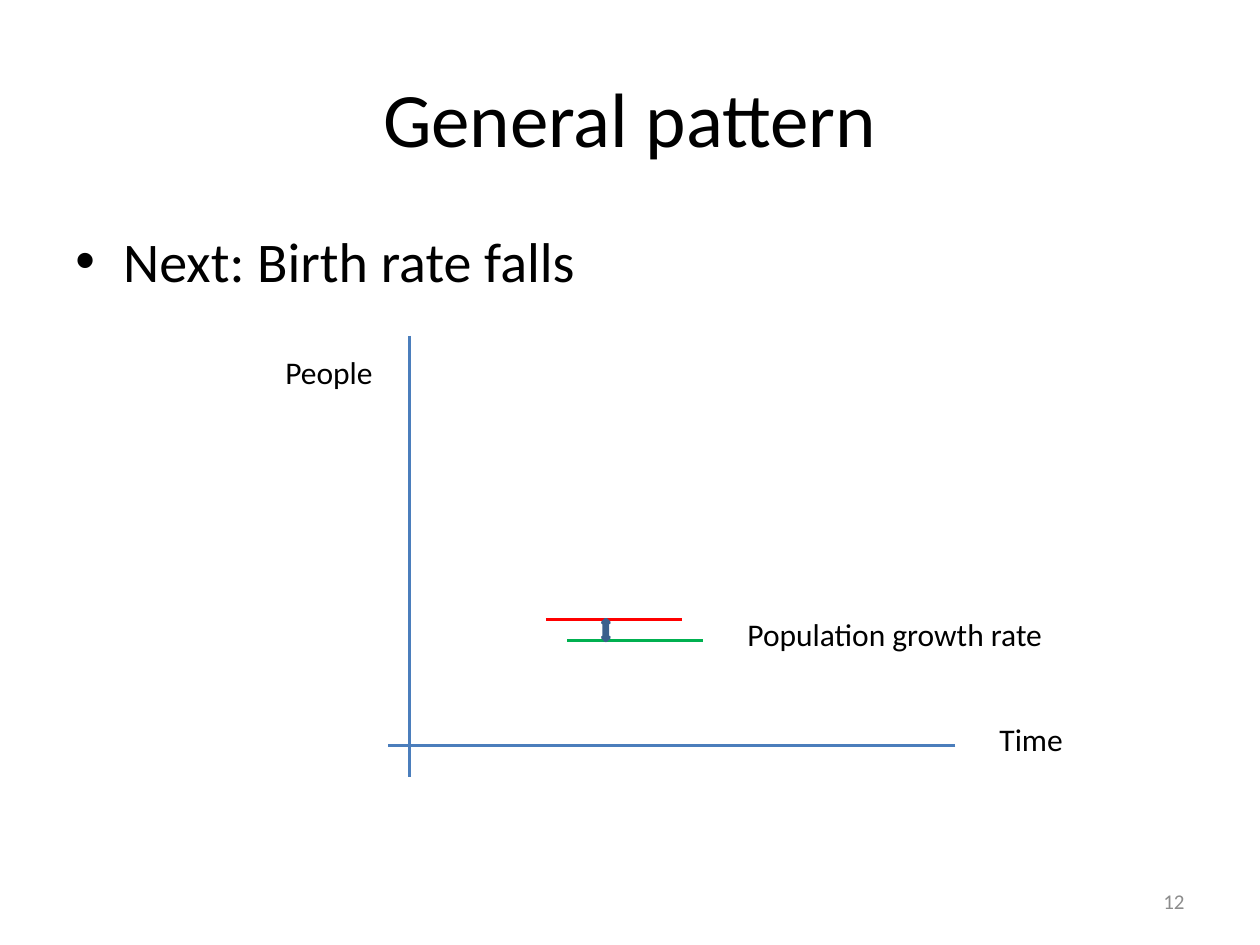
from lxml import etree
from pptx import Presentation
from pptx.dml.color import RGBColor
from pptx.enum.shapes import MSO_CONNECTOR, MSO_SHAPE
from pptx.enum.text import MSO_ANCHOR, PP_ALIGN
from pptx.oxml.ns import qn
from pptx.util import Inches, Pt

LEFT, MID, RIGHT = PP_ALIGN.LEFT, PP_ALIGN.CENTER, PP_ALIGN.RIGHT
TOP, CENTER = MSO_ANCHOR.TOP, MSO_ANCHOR.MIDDLE
ARROW = MSO_SHAPE.UP_DOWN_ARROW
STRAIGHT = MSO_CONNECTOR.STRAIGHT
FONT = "Calibri"
AXIS, RED, GREEN = "4B7EBC", "FF0000", "00B050"


def grid(n):
    """Length of n grid steps, twelve to the inch."""
    return Inches(n / 12)


def paint(target, color):
    target.rgb = RGBColor.from_string(color)


def add_text(slide, text, box, size, align=LEFT, anchor=TOP,
             color="000000", wrap=True):
    frame = slide.shapes.add_textbox(*map(grid, box)).text_frame
    frame.word_wrap = wrap
    frame.vertical_anchor = anchor
    frame.text = text
    para = frame.paragraphs[0]
    para.alignment = align
    font = para.runs[0].font
    font.name, font.size = FONT, Pt(size)
    paint(font.color, color)
    return para


def add_bullet(para, indent):
    props = para._p.get_or_add_pPr()
    props.set("marL", str(indent))
    props.set("indent", str(-indent))
    space = etree.SubElement(props, qn("a:spcBef"))
    etree.SubElement(space, qn("a:spcPct")).set("val", "20000")
    etree.SubElement(props, qn("a:buFont")).set("typeface", "Arial")
    etree.SubElement(props, qn("a:buChar")).set("char", "•")


def add_line(slide, ends, color, width):
    line = slide.shapes.add_connector(STRAIGHT, *map(grid, ends))
    paint(line.line.color, color)
    line.line.width = Pt(width)
    etree.SubElement(line._element.spPr, qn("a:effectLst"))


def add_arrow(slide, box):
    arrow = slide.shapes.add_shape(ARROW, *map(grid, box))
    arrow.shadow.inherit = False
    arrow.fill.solid()
    paint(arrow.fill.fore_color, "4F81BD")
    paint(arrow.line.color, "3A5F8C")
    arrow.line.width = Pt(2)


def main():
    deck = Presentation()
    deck.slide_width, deck.slide_height = grid(120), grid(90)
    slide = deck.slides.add_slide(deck.slide_layouts[6])

    # Title, bullet and page number
    add_text(slide, "General pattern", (6, 3.6, 108, 15), 44, MID, CENTER)
    point = add_text(slide, "Next: Birth rate falls", (6, 21, 108, 59.4), 32)
    add_bullet(point, Inches(0.38))
    add_text(slide, "12", (86, 83.4, 28, 4.8), 12, RIGHT, CENTER, "8C8C8C")

    # Axes
    add_line(slide, (39, 32, 39, 74), AXIS, 2)
    add_line(slide, (91, 71, 37, 71), AXIS, 2)

    # Rates and the gap between them
    add_line(slide, (52, 59, 65, 59), RED, 1.5)
    add_line(slide, (54, 61, 67, 61), GREEN, 1.5)
    add_arrow(slide, (57.4, 59, 0.6, 2))

    # Labels
    add_text(slide, "Time", (94, 68, 15, 4.8), 18)
    add_text(slide, "People", (26, 33, 11, 4.8), 18, wrap=False)
    add_text(slide, "Population growth rate", (70, 58, 38, 4.8), 18)

    deck.save("out.pptx")


if __name__ == "__main__":
    main()
